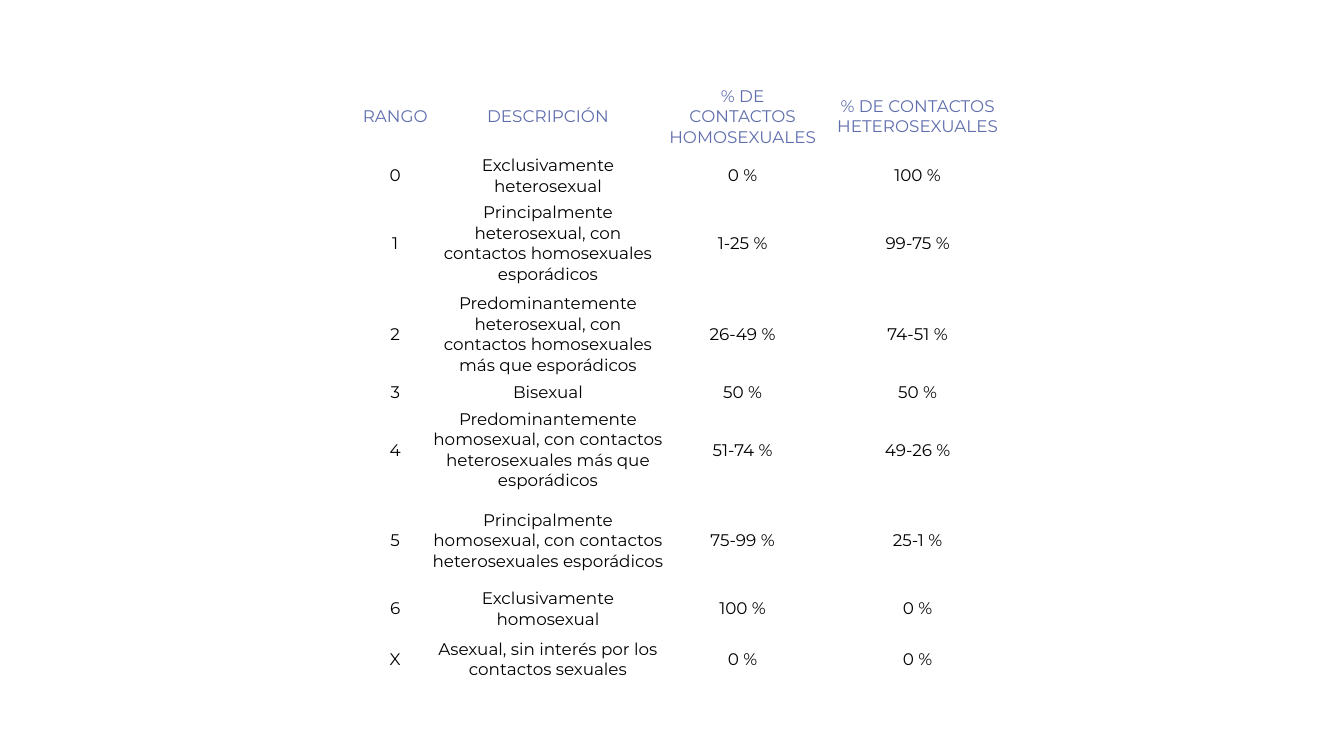
from dataclasses import dataclass

from lxml import etree
from pptx import Presentation
from pptx import util as u
from pptx.dml.color import RGBColor
from pptx.enum import text
from pptx.oxml import ns


@dataclass(frozen=True)
class Theme:
    font: str = "Montserrat"
    size: int = 12
    heading: str = "5F6DAC"
    body: str = "000000"
    border: str = "FFFFFF"
    border_width: float = 0.75
    cell_margin: float = 0.05


THEME = Theme()

HEADINGS = ("RANGO", "DESCRIPCIÓN", "% DE CONTACTOS HOMOSEXUALES",
            "% DE CONTACTOS HETEROSEXUALES")
SCALE = (
    ("0", "Exclusivamente heterosexual", "0 %", "100 %"),
    ("1", "Principalmente heterosexual, con contactos homosexuales esporádicos",
     "1-25 %", "99-75 %"),
    ("2", "Predominantemente heterosexual, con contactos homosexuales más que esporádicos",
     "26-49 %", "74-51 %"),
    ("3", "Bisexual", "50 %", "50 %"),
    ("4", "Predominantemente homosexual, con contactos heterosexuales más que esporádicos",
     "51-74 %", "49-26 %"),
    ("5", "Principalmente homosexual, con contactos heterosexuales esporádicos",
     "75-99 %", "25-1 %"),
    ("6", "Exclusivamente homosexual", "100 %", "0 %"),
    ("X", "Asexual, sin interés por los contactos sexuales", "0 %", "0 %"),
)
COLUMN_WIDTHS = (1.78, 5.92, 3.89, 4.93)
HEADING_HEIGHT, ONE_LINE, TWO_LINES, FOUR_LINES, LAST_HEIGHT = 1.85, 0.58, 1.02, 2.29, 1.42
ROW_HEIGHTS = (HEADING_HEIGHT, TWO_LINES, FOUR_LINES, FOUR_LINES, ONE_LINE,
               FOUR_LINES, FOUR_LINES, TWO_LINES, LAST_HEIGHT)


def apply(target, formats):
    for name, value in formats.items():
        setattr(target, name, value)


def add_borders(cell):
    properties = cell._tc.get_or_add_tcPr()
    for side in ("lnL", "lnR", "lnT", "lnB"):
        line = etree.SubElement(properties, ns.qn(f"a:{side}"),
                                w=str(u.Pt(THEME.border_width)))
        fill = etree.SubElement(line, ns.qn("a:solidFill"))
        etree.SubElement(fill, ns.qn("a:srgbClr"), val=THEME.border)


def fill_cell(cell, wording, color):
    margin = u.Cm(THEME.cell_margin)
    apply(cell, {"text": wording, "vertical_anchor": text.MSO_ANCHOR.MIDDLE,
                 "margin_left": margin, "margin_right": margin,
                 "margin_top": margin, "margin_bottom": margin})
    add_borders(cell)
    cell.fill.background()
    para = cell.text_frame.paragraphs[0]
    para.alignment = text.PP_ALIGN.CENTER
    span = para.runs[0]
    apply(span.font, {"name": THEME.font, "size": u.Pt(THEME.size), "bold": False})
    span.font.color.rgb = RGBColor.from_string(color)


def add_scale_table(page, left, top, width, height):
    rows = (HEADINGS, *SCALE)
    frame = page.shapes.add_table(len(rows), len(HEADINGS), left, top, width, height)
    table = frame.table
    apply(table, {"first_row": False, "horz_banding": False})

    # Column and row sizes
    for column, column_width in zip(table.columns, COLUMN_WIDTHS):
        column.width = u.Cm(column_width)
    for row, row_height in zip(table.rows, ROW_HEIGHTS):
        row.height = u.Cm(row_height)
    apply(frame, {"width": width, "height": height})

    # Headings and scale values
    for row_index, wordings in enumerate(rows):
        color = THEME.body if row_index else THEME.heading
        for column_index, wording in enumerate(wordings):
            fill_cell(table.cell(row_index, column_index), wording, color)


def main():
    deck = Presentation()
    apply(deck, {"slide_width": u.Cm(33.87), "slide_height": u.Cm(19.05)})
    page = deck.slides.add_slide(deck.slide_layouts[6])
    add_scale_table(page, u.Cm(9.07), u.Cm(2.01), u.Cm(sum(COLUMN_WIDTHS)), u.Cm(16.31))
    deck.save("out.pptx")


if __name__ == "__main__":
    main()
